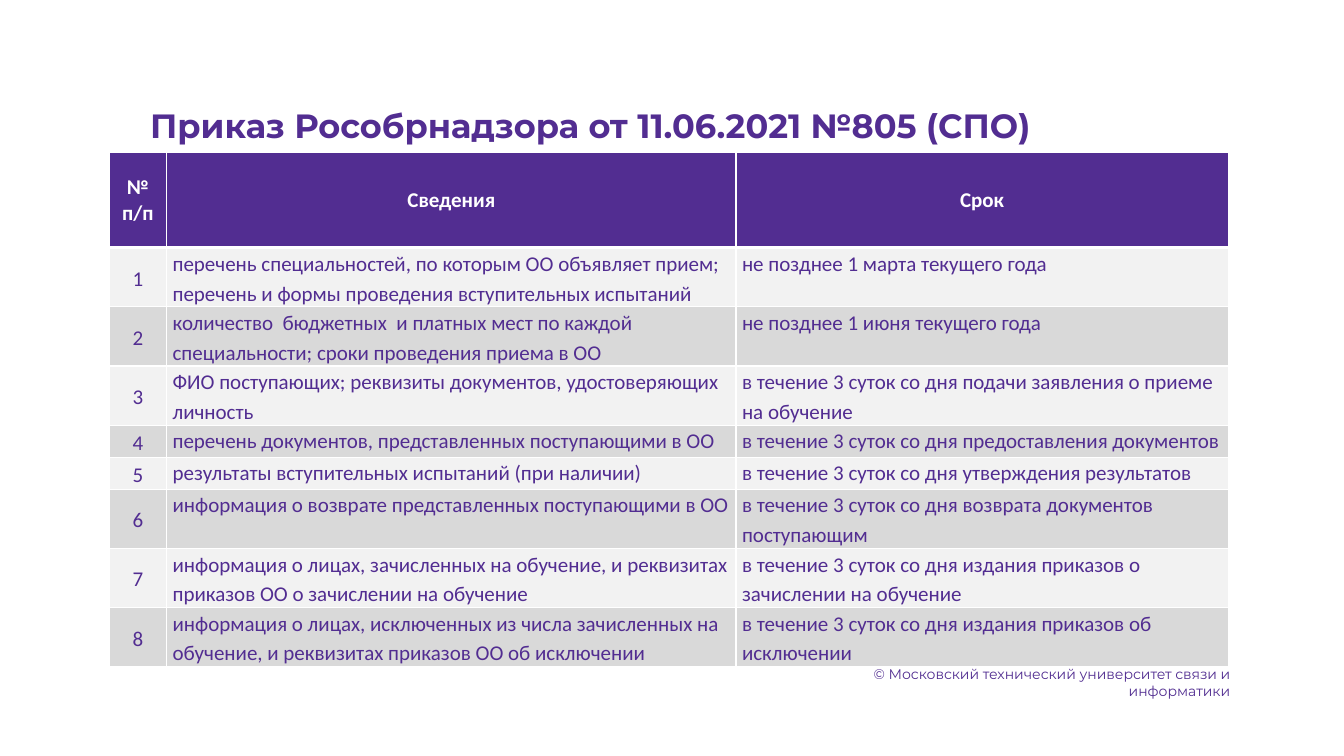
import pptx
import pptx.dml.color
import pptx.enum.text
import pptx.oxml
import pptx.oxml.ns
import pptx.util
from pptx.util import Cm

# Content
TITLE = "Приказ Рособрнадзора от 11.06.2021 №805 (СПО)"
FOOTER = "© Московский технический университет связи и информатики"
HEADINGS = ("№ п/п", "Сведения", "Срок")
# Information, deadline, lines of text in the row
ENTRIES = [
    ("перечень специальностей, по которым ОО объявляет прием; перечень и формы проведения вступительных испытаний",
     "не позднее 1 марта текущего года", 2),
    ("количество  бюджетных  и платных мест по каждой специальности; сроки проведения приема в ОО",
     "не позднее 1 июня текущего года", 2),
    ("ФИО поступающих; реквизиты документов, удостоверяющих личность",
     "в течение 3 суток со дня подачи заявления о приеме на обучение", 2),
    ("перечень документов, представленных поступающими в ОО",
     "в течение 3 суток со дня предоставления документов", 1),
    ("результаты вступительных испытаний (при наличии)",
     "в течение 3 суток со дня утверждения результатов", 1),
    ("информация о возврате представленных поступающими в ОО",
     "в течение 3 суток со дня возврата документов поступающим", 2),
    ("информация о лицах, зачисленных на обучение, и реквизитах приказов ОО о зачислении на обучение",
     "в течение 3 суток со дня издания приказов о зачислении на обучение", 2),
    ("информация о лицах, исключенных из числа зачисленных на обучение, и реквизитах приказов ОО об исключении",
     "в течение 3 суток со дня издания приказов об исключении", 2),
]

# Format
PURPLE, WHITE = "522D91", "FFFFFF"
BANDS = ("F2F2F2", "D9D9D9")
COLUMN_WIDTHS = (1.45, 14.35, 12.4)
HEADER_HEIGHT = 2.39
ROW_HEIGHTS = {1: 0.79, 2: 1.49}
TITLE_FONT = {"name": "Montserrat", "size": pptx.util.Pt(24), "bold": True}
FOOTER_FONT = {"name": "Montserrat", "size": pptx.util.Pt(10), "bold": False}
HEADER_FONT = {"name": "Calibri", "size": pptx.util.Pt(15), "bold": True}
BODY_FONT = {**HEADER_FONT, "bold": False}
ALIGN = pptx.enum.text.PP_ALIGN
ANCHOR = pptx.enum.text.MSO_ANCHOR


def set_values(target, values):
    for name, value in values.items():
        setattr(target, name, value)


def paint(color_format, color):
    color_format.rgb = pptx.dml.color.RGBColor.from_string(color)


def write(frame, text, font, color, align, spacing=None):
    para = frame.paragraphs[0]
    set_values(para, {"alignment": align, "line_spacing": spacing})
    span = para.add_run()
    span.text = text
    set_values(span.font, font)
    paint(span.font.color, color)


def add_borders(cell, widths):
    properties = cell._tc.get_or_add_tcPr()
    for index, (side, points) in enumerate(widths.items()):
        properties.insert(index, pptx.oxml.parse_xml(
            f'<a:ln{side} {pptx.oxml.ns.nsdecls("a")} w="{pptx.util.Pt(points)}">'
            f'<a:solidFill><a:srgbClr val="{WHITE}"/></a:solidFill></a:ln{side}>'))


def fill_cell(cell, text, row, column):
    header = row == 0
    centred = header or column == 0
    side, edge = (0.03, 0.03) if centred else (0.15, 0)
    set_values(cell, {
        "margin_left": Cm(side), "margin_right": Cm(side),
        "margin_top": Cm(edge), "margin_bottom": Cm(edge),
        "vertical_anchor": ANCHOR.MIDDLE if centred else ANCHOR.TOP,
    })
    write(cell.text_frame, text, HEADER_FONT if header else BODY_FONT,
          WHITE if header else PURPLE,
          ALIGN.CENTER if centred else ALIGN.LEFT, None if header else 1.15)
    cell.fill.solid()
    paint(cell.fill.fore_color, PURPLE if header else BANDS[(row - 1) % 2])
    add_borders(cell, {"L": 1, "R": 1, "T": 3 if row == 1 else 1, "B": 3 if header else 1})


def main():
    deck = pptx.Presentation()
    set_values(deck, {"slide_width": Cm(33.87), "slide_height": Cm(19.05)})
    page = deck.slides.add_slide(deck.slide_layouts[5])

    # Title
    title = page.shapes.title
    set_values(title, {"left": Cm(3.53), "top": Cm(2.51), "width": Cm(24.2), "height": Cm(1.28)})
    set_values(title.text_frame, {"word_wrap": True, "vertical_anchor": ANCHOR.TOP})
    write(title.text_frame, TITLE, TITLE_FONT, PURPLE, ALIGN.LEFT)

    # Table of deadlines
    rows = [HEADINGS] + [(str(number), information, deadline)
                         for number, (information, deadline, _) in enumerate(ENTRIES, 1)]
    heights = [HEADER_HEIGHT] + [ROW_HEIGHTS[lines] for _, _, lines in ENTRIES]
    table = page.shapes.add_table(len(rows), len(HEADINGS), Cm(2.75), Cm(3.85),
                                  Cm(sum(COLUMN_WIDTHS)), Cm(sum(heights))).table
    for column, width in zip(table.columns, COLUMN_WIDTHS):
        column.width = Cm(width)
    for row, (texts, height) in enumerate(zip(rows, heights)):
        table.rows[row].height = Cm(height)
        for column, text in enumerate(texts):
            fill_cell(table.cell(row, column), text, row, column)

    # Copyright line
    footer = page.shapes.add_textbox(Cm(21.06), Cm(16.64), Cm(10.19), Cm(1.1))
    footer.text_frame.word_wrap = True
    write(footer.text_frame, FOOTER, FOOTER_FONT, "522E91", ALIGN.RIGHT)

    deck.save("out.pptx")


if __name__ == "__main__":
    main()
